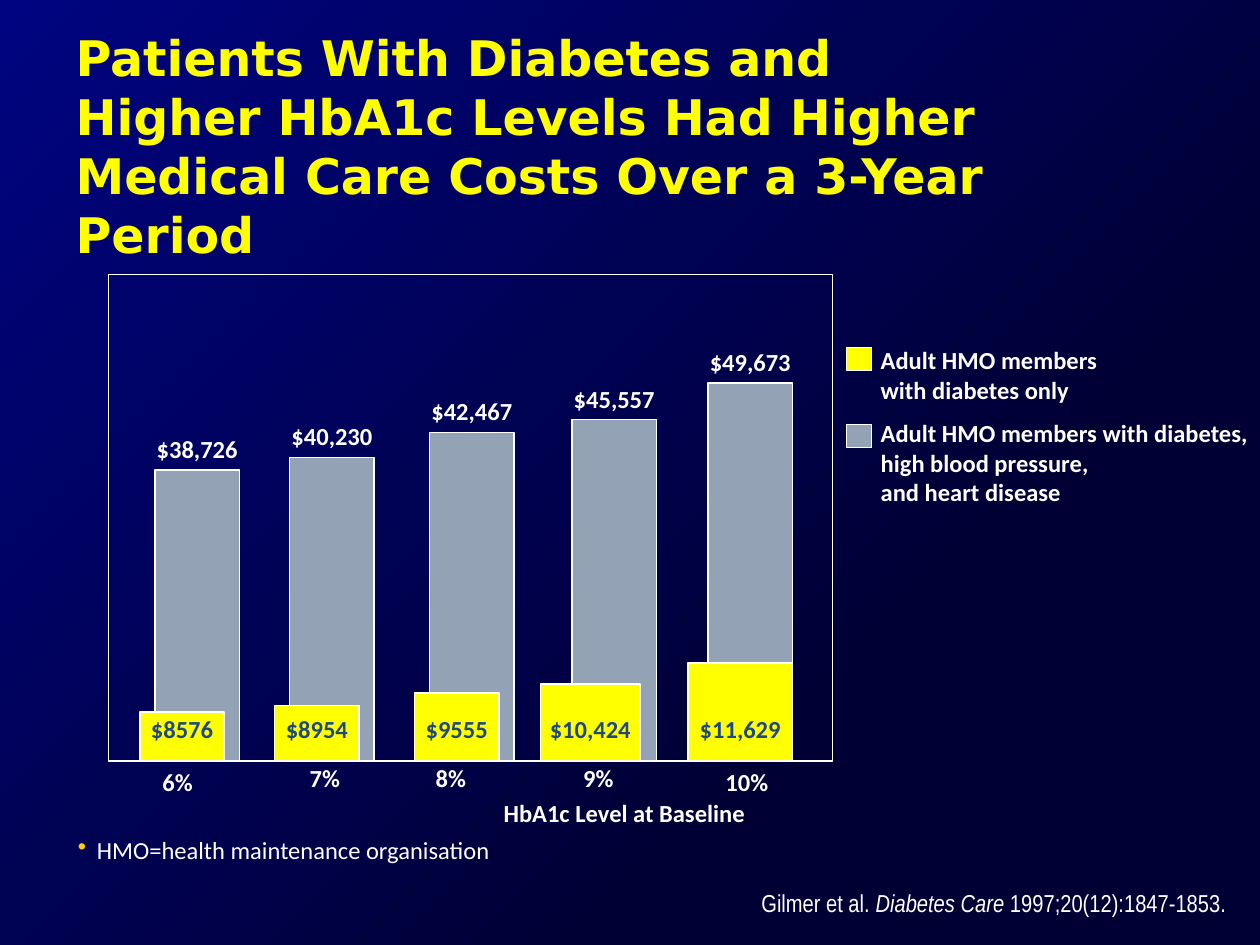
from dataclasses import dataclass
from typing import NamedTuple

import pptx
import pptx.dml.color
import pptx.enum.shapes
import pptx.enum.text
import pptx.oxml
import pptx.oxml.ns
import pptx.util

Align = pptx.enum.text.PP_ALIGN
COLUMNS, ROWS = 100, 75  # square grid over the slide


def rgb(value: str) -> pptx.dml.color.RGBColor:
    return pptx.dml.color.RGBColor.from_string(value)


@dataclass(frozen=True)
class Theme:
    night: str = "000035"
    blue: str = "000480"
    yellow: str = "FFFF00"
    grey: str = "93A2B4"
    white: str = "FFFFFF"
    navy: str = "1F497D"
    bullet: str = "FFCC00"
    title_font: str = "DejaVu Sans"
    body_font: str = "Calibri"
    source_font: str = "Arial Narrow"
    title_size: float = 28
    body_size: float = 14
    thin: float = 0.75
    strong: float = 1


class Box(NamedTuple):
    """A place on the grid."""
    left: float
    top: float
    width: float
    height: float


class CostGroup(NamedTuple):
    """One HbA1c level: all complications behind, diabetes only in front."""
    level: str
    level_box: Box
    combined_cost: str
    combined_left: float
    combined_top: float
    diabetes_cost: str
    diabetes_left: float
    diabetes_top: float
    diabetes_width: float = 6.7


class LegendEntry(NamedTuple):
    color: str
    swatch_top: float
    text_top: float
    lines: tuple[str, ...]


THEME = Theme()
BASELINE = 60.4
BAR_WIDTH = 6.7
LABEL_WIDTH, LABEL_HEIGHT = 7.8, 2.4
COMBINED_LABEL_RISE = 2.85
DIABETES_LABEL_TOP = 56.7

GROUPS = (
    CostGroup("6%", Box(11.9, 60.4, 4.9, 3.4), "$38,726", 12.3, 37.3, "$8576", 11.1, 56.5),
    CostGroup("7%", Box(23.6, 60.1, 5.8, 3.4), "$40,230", 23, 36.3, "$8954", 21.8, 56),
    CostGroup("8%", Box(33.6, 60.1, 7.5, 3.4), "$42,467", 34.1, 34.3, "$9555", 32.9, 55),
    CostGroup("9%", Box(45.3, 60.1, 5.5, 3.4), "$45,557", 45.4, 33.3, "$10,424", 42.9, 54.3, 7.9),
    CostGroup("10%", Box(56.6, 60.4, 6.3, 3.4), "$49,673", 56.2, 30.4, "$11,629", 54.6, 52.6, 8.3),
)
LEGEND = (
    LegendEntry(THEME.yellow, 27.6, 27.4, ("Adult HMO members", "with diabetes only")),
    LegendEntry(THEME.grey, 33.7, 33.2, ("Adult HMO members with diabetes,",
                                         "high blood pressure,", "and heart disease")),
)

deck = pptx.Presentation()
deck.slide_width, deck.slide_height = pptx.util.Inches(10), pptx.util.Inches(7.5)
slide = deck.slides.add_slide(deck.slide_layouts[5])


def place(box: Box) -> tuple[int, int, int, int]:
    column, row = deck.slide_width / COLUMNS, deck.slide_height / ROWS
    return (round(box.left * column), round(box.top * row),
            round(box.width * column), round(box.height * row))


def style(paragraph, color: str = THEME.white, bold: bool = True,
          name: str = THEME.body_font, size: float = THEME.body_size) -> None:
    font = paragraph.font
    font.name, font.size, font.bold = name, pptx.util.Pt(size), bold
    font.color.rgb = rgb(color)


def add_text(box: Box, lines: tuple[str, ...], align: Align = Align.CENTER,
             color: str = THEME.white, inset: bool = False):
    frame = slide.shapes.add_textbox(*place(box)).text_frame
    frame.word_wrap = True
    if not inset:
        frame.margin_left = frame.margin_right = frame.margin_top = frame.margin_bottom = 0
    for index, line in enumerate(lines):
        paragraph = frame.add_paragraph() if index else frame.paragraphs[0]
        paragraph.text = line
        paragraph.alignment = align
        style(paragraph, color)
    return frame


def add_block(box: Box, color: str | None, line_width: float = THEME.thin) -> None:
    block = slide.shapes.add_shape(pptx.enum.shapes.MSO_SHAPE.RECTANGLE, *place(box))
    block.shadow.inherit = False
    if color:
        block.fill.solid()
        block.fill.fore_color.rgb = rgb(color)
    else:
        block.fill.background()
    block.line.color.rgb = rgb(THEME.white)
    block.line.width = pptx.util.Pt(line_width)


def add_cost_label(bar: Box, top: float, cost: str, color: str) -> None:
    left = bar.left + (bar.width - LABEL_WIDTH) / 2
    add_text(Box(left, top, LABEL_WIDTH, LABEL_HEIGHT), (cost,), color=color)


def add_group(group: CostGroup) -> None:
    combined = Box(group.combined_left, group.combined_top,
                   BAR_WIDTH, BASELINE - group.combined_top)
    diabetes = Box(group.diabetes_left, group.diabetes_top,
                   group.diabetes_width, BASELINE - group.diabetes_top)
    add_block(combined, THEME.grey)
    add_block(diabetes, THEME.yellow, THEME.strong)
    add_cost_label(combined, combined.top - COMBINED_LABEL_RISE,
                   group.combined_cost, THEME.white)
    add_cost_label(diabetes, DIABETES_LABEL_TOP, group.diabetes_cost, THEME.navy)
    add_text(group.level_box, (group.level,), Align.LEFT, inset=True)


def add_legend_entry(entry: LegendEntry) -> None:
    add_block(Box(67.2, entry.swatch_top, 2, 1.8), entry.color)
    add_text(Box(69.9, entry.text_top, 30, 2.35 * len(entry.lines)), entry.lines, Align.LEFT)


def paint_background() -> None:
    fill = slide.background.fill
    fill.gradient()
    for stop, color, position in zip(fill.gradient_stops, (THEME.night, THEME.blue), (0.3, 1)):
        stop.color.rgb = rgb(color)
        stop.position = position
    gradient = slide.element.find(".//" + pptx.oxml.ns.qn("a:gradFill"))
    gradient.remove(gradient.find(pptx.oxml.ns.qn("a:lin")))
    gradient.append(pptx.oxml.parse_xml(
        f'<a:path {pptx.oxml.ns.nsdecls("a")} path="circle">'
        '<a:fillToRect l="100000" t="100000"/></a:path>'))


def add_bullet(paragraph) -> None:
    properties = paragraph._p.get_or_add_pPr()
    indent = pptx.util.Inches(0.15)
    properties.set("marL", str(indent))
    properties.set("indent", str(-indent))
    namespace = pptx.oxml.ns.nsdecls("a")
    for xml in (f'<a:buClr {namespace}><a:srgbClr val="{THEME.bullet}"/></a:buClr>',
                f'<a:buChar {namespace} char="•"/>'):
        properties.append(pptx.oxml.parse_xml(xml))


paint_background()

# Title
title = slide.shapes.title
title.left, title.top, title.width, title.height = place(Box(5, 1.7, 76.7, 12.5))
title.text_frame.text = ("Patients With Diabetes and Higher HbA1c Levels "
                         "Had Higher Medical Care Costs Over a 3-Year Period")
title.text_frame.auto_size = pptx.enum.text.MSO_AUTO_SIZE.NONE
title.text_frame.vertical_anchor = pptx.enum.text.MSO_ANCHOR.TOP
heading = title.text_frame.paragraphs[0]
heading.alignment = Align.LEFT
style(heading, THEME.yellow, name=THEME.title_font, size=THEME.title_size)

# Cost bars in their frame, with axis title
add_block(Box(8.6, 21.8, 57.5, 38.6), None)
for cost_group in GROUPS:
    add_group(cost_group)
add_text(Box(30.8, 63.3, 37.5, 2.4), ("HbA1c Level at Baseline",))

# Legend
for legend_entry in LEGEND:
    add_legend_entry(legend_entry)

# Abbreviation
abbreviation = add_text(Box(5.2, 65.8, 73.6, 2.5), ("",), Align.LEFT, inset=True).paragraphs[0]
abbreviation.text = "HMO=health maintenance organisation"
add_bullet(abbreviation)
style(abbreviation, bold=False)

# Source
citation = add_text(Box(47.5, 70, 50.8, 5), ("Gilmer et al. ",), Align.RIGHT, inset=True).paragraphs[0]
journal = citation.add_run()
journal.text = "Diabetes Care "
journal.font.italic = True
citation.add_run().text = "1997;20(12):1847-1853."
style(citation, bold=False, name=THEME.source_font)

deck.save("out.pptx")
